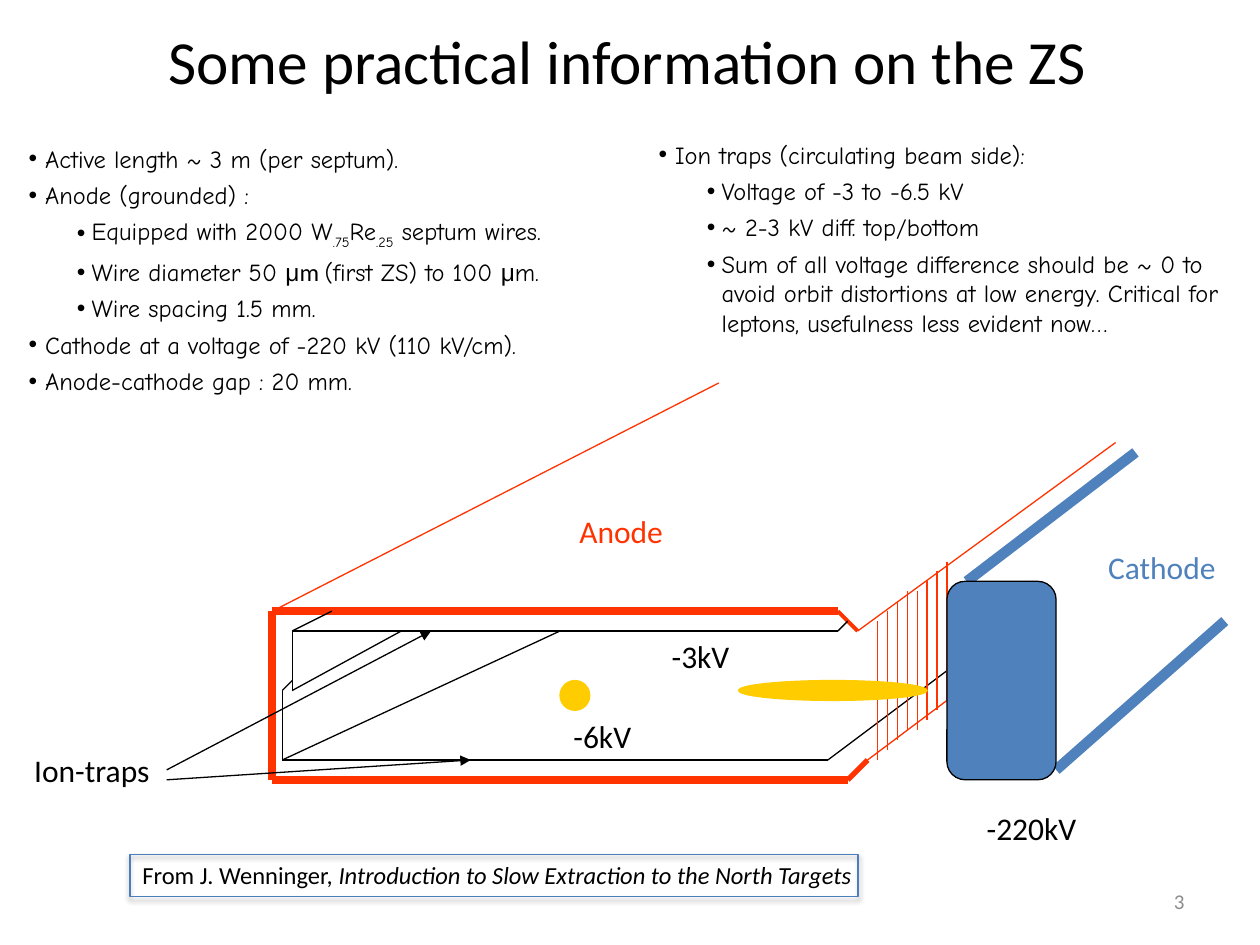
import dataclasses

import pptx
import pptx.dml.color
import pptx.enum.shapes
import pptx.enum.text
import pptx.oxml
import pptx.oxml.ns
import pptx.util

Cm = pptx.util.Cm
Pt = pptx.util.Pt
SHAPE = pptx.enum.shapes.MSO_SHAPE
ALIGN = pptx.enum.text.PP_ALIGN
FIT = pptx.enum.text.MSO_AUTO_SIZE
MIDDLE = pptx.enum.text.MSO_ANCHOR.MIDDLE


@dataclasses.dataclass(frozen=True)
class Theme:
    ink: str = "000000"
    anode: str = "FF3300"
    metal: str = "4F81BD"
    beam: str = "FFCC00"
    frame: str = "4B7EBC"
    grey: str = "8C8C8C"
    font: str = "Calibri"
    hand: str = "Comic Neue"
    greek: str = "Arial"
    title: int = 35
    label: int = 18
    body: int = 14
    page: int = 12
    thin: float = 0.75


T = Theme()


def rgb(code):
    return pptx.dml.color.RGBColor.from_string(code)


def add_xml(parent, xml):
    """Append a DrawingML element; {ns} in it stands for the namespace."""
    ns = pptx.oxml.ns.nsdecls("a")
    parent.append(pptx.oxml.parse_xml(xml.replace("{ns}", ns)))


def say(para, text, size=T.body, color=T.ink, font=T.font, italic=None, base=0):
    """Add a run; base is the baseline shift in percent."""
    run = para.add_run()
    run.text = text
    run.font.size = Pt(size)
    run.font.name = font
    run.font.color.rgb = rgb(color)
    run.font.italic = italic
    if base:
        run.font._element.set("baseline", str(base * 1000))


def text_box(slide, x, y, w, h, wrap=True, fit=FIT.SHAPE_TO_FIT_TEXT):
    frame = slide.shapes.add_textbox(Cm(x), Cm(y), Cm(w), Cm(h)).text_frame
    frame.word_wrap = wrap
    frame.auto_size = fit
    return frame


def line(slide, start, end, color=T.ink, width=T.thin, arrow=False):
    ends = [Cm(v) for v in (*start, *end)]
    kind = pptx.enum.shapes.MSO_CONNECTOR.STRAIGHT
    link = slide.shapes.add_connector(kind, *ends)
    link.line.color.rgb = rgb(color)
    link.line.width = Pt(width)
    if arrow:
        add_xml(link.line._get_or_add_ln(), '<a:tailEnd {ns} type="triangle"/>')
    add_xml(link._element.spPr, "<a:effectLst {ns}/>")


def solid(slide, kind, x, y, w, h, fill, edge):
    item = slide.shapes.add_shape(kind, Cm(x), Cm(y), Cm(w), Cm(h))
    item.shadow.inherit = False
    if fill:
        item.fill.solid()
        item.fill.fore_color.rgb = rgb(fill)
    else:
        item.fill.background()
    item.line.color.rgb = rgb(edge)
    item.line.width = Pt(T.thin)
    return item


def head(slide, x, y, w, h):
    title = slide.shapes.title
    title.left, title.top, title.width, title.height = Cm(x), Cm(y), Cm(w), Cm(h)
    frame = title.text_frame
    frame.vertical_anchor = MIDDLE
    frame.auto_size = FIT.NONE
    para = frame.paragraphs[0]
    para.alignment = ALIGN.CENTER
    say(para, "Some practical information on the ZS", size=T.title)


def bullets(slide, x, y, w, h, items):
    """Each item is a level followed by runs: plain text or (text, format)."""
    frame = text_box(slide, x, y, w, h)
    for i, (level, *runs) in enumerate(items):
        para = frame.add_paragraph() if i else frame.paragraphs[0]
        para.level = level
        para.space_before = Pt(4)
        props = para._p.get_or_add_pPr()
        props.set("marL", str(Cm((0.33, 1.27)[level])))
        props.set("indent", str(Cm((-0.33, -0.3)[level])))
        add_xml(props, '<a:buFont {ns} typeface="Arial"/>')
        add_xml(props, '<a:buChar {ns} char="•"/>')
        for run in runs:
            text, form = (run, {}) if isinstance(run, str) else run
            say(para, text, **{"font": T.hand, **form})


def septum(slide, x, y):
    """Draw the septum on a 0.2 cm grid from the anode's top left corner."""

    def at(point):
        return x + point[0], y + point[1]

    strokes = {
        (T.anode, 4.5): [((0, 0), (11.4, 0)), ((0, 3.4), (11.6, 3.4)),
                         ((0, 0), (0, 3.4))],
        (T.anode, 3): [((11.6, 3.4), (12, 3))],
        (T.anode, 2.25): [((11.4, 0), (11.8, 0.4))],
        (T.anode, T.thin): [((0, 0), (9, -4.6)), ((11.8, 0.4), (17, -3.4)),
                            ((12, 3), (13.6, 1.8))],
        (T.ink, T.thin): [
            ((0.4, 0.4), (0.4, 1.6)), ((0.4, 0.4), (11.4, 0.4)),
            ((0.2, 1.6), (0.2, 3)), ((0.2, 3), (11.2, 3)),
            ((11.4, 0.4), (11.6, 0.2)), ((11.2, 3), (13.6, 1.2)),
            ((0.4, 0.4), (1.2, 0)), ((0.2, 3), (5.8, 0.4)),
            ((0.4, 1.6), (2.6, 0.4)), ((0.2, 1.6), (0.4, 1.4))],
        (T.metal, 6): [((14, -0.6), (17.4, -3.2)), ((15.8, 3.2), (19.2, 0.2))],
    }
    for (color, width), pairs in strokes.items():
        for start, end in pairs:
            line(slide, at(start), at(end), color, width)

    tops = (0.2, 0, -0.2, -0.4, -0.4, -0.6, -0.8, -1)
    for i, top in enumerate(tops):
        wire = 12.2 + 0.2 * i
        line(slide, at((wire, top)), at((wire, top + 2.8)), T.anode)

    solid(slide, SHAPE.ROUNDED_RECTANGLE, *at((13.6, -0.6)), 2.2, 4, T.metal, T.ink)
    for left, w, h in ((5.8, 0.6, 0.6), (9.4, 3.8, 0.4)):
        solid(slide, SHAPE.OVAL, *at((left, 1.4)), w, h, T.beam, T.beam)

    for start, end in (((-2.13, 3.2), (3.2, 0.4)), ((-2.13, 3.4), (4, 3))):
        line(slide, at(start), at(end), arrow=True)

    labels = (("-220kV", 14.15, 3.86, 2.51, T.ink), ("-6kV", 5.82, 2, 1.83, T.ink),
              ("-3kV", 7.8, 0.4, 1.83, T.ink), ("Anode", 5.94, -2.13, 2.34, T.anode),
              ("Cathode", 16.6, -1.4, 2.92, T.metal),
              ("Ion-traps", -5.05, 2.7, 3.02, T.ink))
    for text, left, top, w, color in labels:
        frame = text_box(slide, *at((left, top)), w, 1.02, wrap=False)
        say(frame.paragraphs[0], text, size=T.label, color=color)


def credit(slide, x, y, w, h):
    para = text_box(slide, x, y, w + 0.2, h).paragraphs[0]
    say(para, "From J. Wenninger, ")
    say(para, "Introduction to Slow Extraction to the North Targets", italic=True)
    frame = solid(slide, SHAPE.RECTANGLE, x, y, w, h, None, T.frame)
    glow = frame._element.spPr.find(pptx.oxml.ns.qn("a:effectLst"))
    add_xml(glow, f'<a:outerShdw {{ns}} blurRad="{Pt(3.1)}" dist="{Pt(1.8)}" '
                  f'dir="5400000" rotWithShape="0"><a:srgbClr val="{T.ink}">'
                  '<a:alpha val="35000"/></a:srgbClr></a:outerShdw>')


def folio(slide, x, y, w, h):
    """Place the page number."""
    frame = text_box(slide, x, y, w, h, fit=FIT.NONE)
    frame.vertical_anchor = MIDDLE
    para = frame.paragraphs[0]
    para.alignment = ALIGN.RIGHT
    say(para, "3", size=T.page, color=T.grey)


def main():
    deck = pptx.Presentation()
    deck.slide_width, deck.slide_height = Cm(25.4), Cm(19.05)
    slide = deck.slides.add_slide(deck.slide_layouts[5])
    low, mu = {"base": -25}, ("μ", {"font": T.greek})
    head(slide, 1.22, 0, 22.86, 2.41)
    septum(slide, 5.49, 12.32)
    bullets(slide, 0.33, 2.77, 12.37, 5.31, [
        (0, "Active length ~ 3 m (per septum)."),
        (0, "Anode (grounded) :"),
        (1, "Equipped with 2000 W", (".75", low), "Re", (".25", low),
         " septum wires."),
        (1, "Wire diameter 50 ", mu, ("m ", {"font": T.font}),
         "(first ZS) to 100 ", mu, "m."),
        (1, "Wire spacing 1.5 mm."),
        (0, "Cathode at a voltage of -220 kV (110 kV/cm)."),
        (0, "Anode-cathode gap : 20 mm.")])
    bullets(slide, 13.03, 2.69, 12.37, 4.27, [
        (0, "Ion traps (circulating beam side):"),
        (1, "Voltage of -3 to -6.5 kV"),
        (1, "~ 2-3 kV diff. top/bottom"),
        (1, "Sum of all voltage difference should be ~ 0 to avoid orbit "
            "distortions at low energy. Critical for leptons, usefulness "
            "less evident now…")])
    folio(slide, 18.21, 17.65, 5.92, 1.02)
    credit(slide, 2.62, 17.22, 14.68, 0.86)
    deck.save("out.pptx")


if __name__ == "__main__":
    main()
